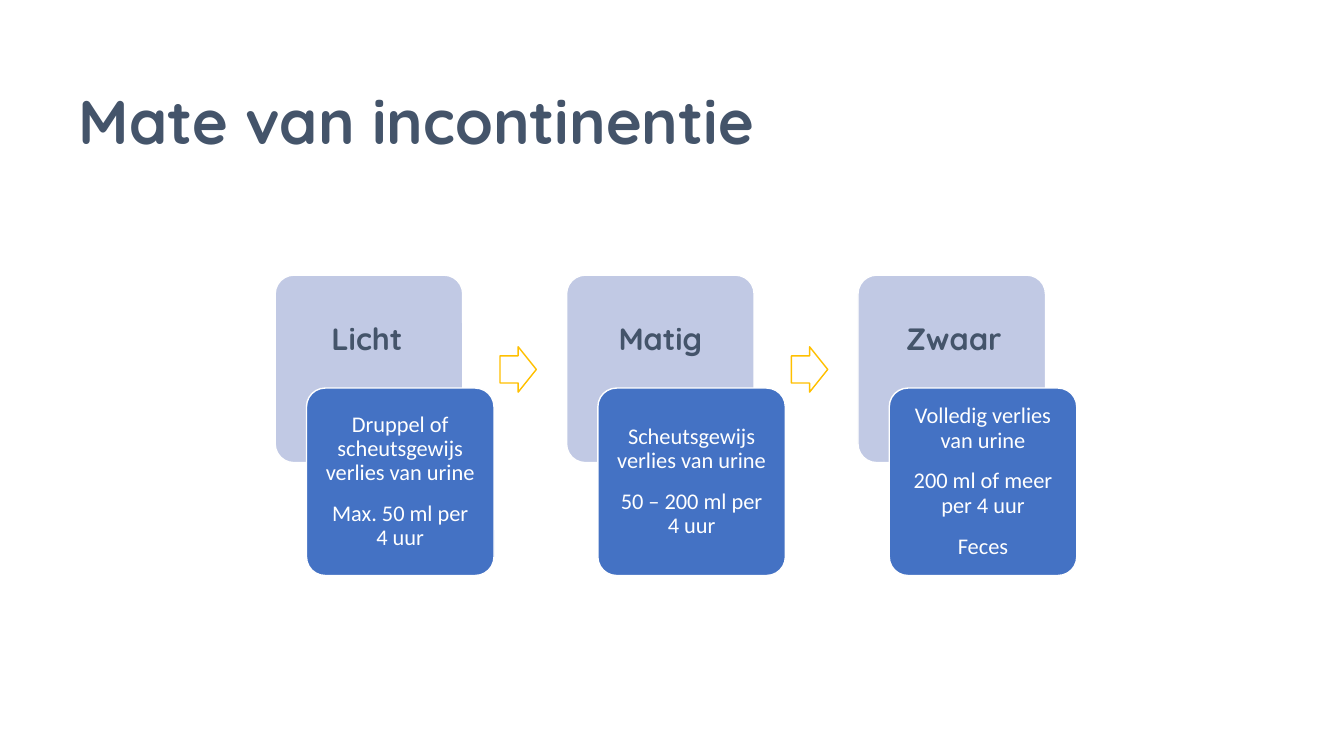
from dataclasses import dataclass

from pptx import Presentation
from pptx import util as u
from pptx.dml.color import RGBColor
from pptx.enum import shapes, text


@dataclass(frozen=True)
class Theme:
    ink: str = "44546A"
    pale: str = "C1C9E4"
    blue: str = "4472C4"
    gold: str = "FFC000"
    white: str = "FFFFFF"
    heading_font: str = "Quicksand"
    body_font: str = "Calibri"
    title_size: int = 44
    label_size: int = 22
    body_size: int = 16


class SlideBuilder:
    def __init__(self, slide, theme):
        self.slide = slide
        self.theme = theme

    def add_run(self, paragraph, wording, font, size, color, bold=False):
        run = paragraph.add_run()
        run.text = wording
        run.font.name = font
        run.font.size = u.Pt(size)
        run.font.bold = bold
        run.font.color.rgb = RGBColor.from_string(color)

    def title(self, wording, box):
        title = self.slide.shapes.title
        title.left, title.top, title.width, title.height = map(u.Inches, box)
        frame = title.text_frame
        frame.word_wrap = True
        frame.auto_size = text.MSO_AUTO_SIZE.NONE
        frame.vertical_anchor = text.MSO_ANCHOR.MIDDLE
        paragraph = frame.paragraphs[0]
        paragraph.alignment = text.PP_ALIGN.LEFT
        paragraph.line_spacing = 0.9
        self.add_run(paragraph, wording, self.theme.heading_font,
                     self.theme.title_size, self.theme.ink, True)

    def shape(self, kind, box, fill, line, adjustments):
        shape = self.slide.shapes.add_shape(kind, *map(u.Inches, box))
        shape.shadow.inherit = False
        for index, value in enumerate(adjustments):
            shape.adjustments[index] = value
        shape.fill.solid()
        shape.fill.fore_color.rgb = RGBColor.from_string(fill)
        shape.line.color.rgb = RGBColor.from_string(line)
        shape.line.width = u.Pt(1)
        return shape

    def square(self, left, top, fill):
        return self.shape(shapes.MSO_SHAPE.ROUNDED_RECTANGLE, (left, top, 1.86, 1.86),
                          fill, self.theme.white, [0.1])

    def card(self, left, top, lines):
        frame = self.square(left, top, self.theme.blue).text_frame
        frame.word_wrap = True
        frame.vertical_anchor = text.MSO_ANCHOR.MIDDLE
        frame.margin_left = frame.margin_right = u.Inches(0.12)
        frame.margin_top = frame.margin_bottom = u.Inches(0.12)
        for index, wording in enumerate(lines):
            paragraph = frame.add_paragraph() if index else frame.paragraphs[0]
            paragraph.alignment = text.PP_ALIGN.CENTER
            paragraph.line_spacing = 0.9
            paragraph.space_after = u.Pt(12 if index < len(lines) - 1 else 5.6)
            self.add_run(paragraph, wording, self.theme.body_font,
                         self.theme.body_size, self.theme.white)

    def arrow(self, left, top):
        self.shape(shapes.MSO_SHAPE.RIGHT_ARROW, (left, top, 0.36, 0.45),
                   self.theme.white, self.theme.gold, [0.6, 0.5])

    def label(self, wording, left, top):
        box = self.slide.shapes.add_textbox(*map(u.Inches, (left, top, 1.34, 0.47)))
        box.text_frame.word_wrap = True
        paragraph = box.text_frame.paragraphs[0]
        paragraph.alignment = text.PP_ALIGN.CENTER
        self.add_run(paragraph, wording, self.theme.heading_font,
                     self.theme.label_size, self.theme.ink, True)


DEGREES = [
    ("Licht", ["Druppel of scheutsgewijs verlies van urine", "Max. 50 ml per 4 uur"]),
    ("Matig", ["Scheutsgewijs verlies van urine", "50 – 200 ml per 4 uur"]),
    ("Zwaar", ["Volledig verlies van urine", "200 ml of meer per 4 uur", "Feces"]),
]
FIRST_LEFT = 2.73
STEP = 2.89
LABEL_STEP = 2.91


def main():
    presentation = Presentation()
    presentation.slide_width = u.Inches(13.33)
    presentation.slide_height = u.Inches(7.5)
    slide = presentation.slides.add_slide(presentation.slide_layouts.get_by_name("Title Only"))
    theme = Theme()
    builder = SlideBuilder(slide, theme)

    builder.title("Mate van incontinentie", (0.68, 0.93, 10.71, 0.62))
    for index, (degree, lines) in enumerate(DEGREES):
        left = FIRST_LEFT + index * STEP
        builder.square(left, 2.73, theme.pale)
        builder.card(left + 0.31, 3.85, lines)
        if index < len(DEGREES) - 1:
            builder.arrow(left + 2.23, 3.44)
        builder.label(degree, 2.97 + index * LABEL_STEP, 3.12)

    presentation.save("out.pptx")


if __name__ == "__main__":
    main()
